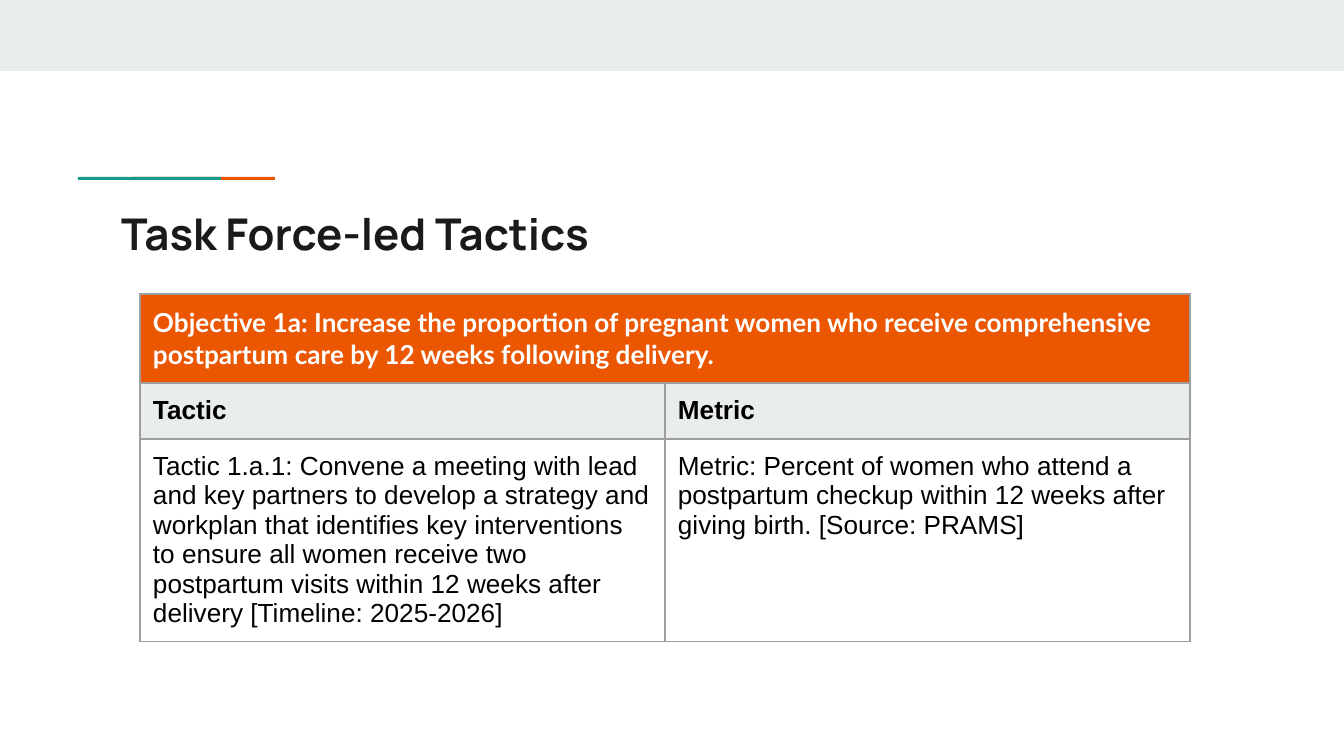
from lxml.etree import SubElement
from pptx import Presentation
from pptx.dml.color import RGBColor
from pptx.enum.shapes import MSO_SHAPE
from pptx.enum.text import MSO_ANCHOR, MSO_AUTO_SIZE, PP_ALIGN
from pptx.oxml.ns import qn
from pptx.util import Emu, Pt

WHITE = RGBColor(0xFF, 0xFF, 0xFF)
BLACK = RGBColor(0x00, 0x00, 0x00)
INK = RGBColor(0x1A, 0x1A, 0x1A)
PALE = RGBColor(0xE9, 0xED, 0xEE)
ORANGE = RGBColor(0xEB, 0x56, 0x00)
TEAL = RGBColor(0x1A, 0x99, 0x88)
GREY = RGBColor(0x9E, 0x9E, 0x9E)


def px(n):
    return Emu(round(n * 914400 / 134.4))


def outline(cell):
    props = cell._tc.get_or_add_tcPr()
    for side in ("a:lnL", "a:lnR", "a:lnT", "a:lnB"):
        line = SubElement(props, qn(side), w=str(Pt(0.75)))
        fill = SubElement(line, qn("a:solidFill"))
        SubElement(fill, qn("a:srgbClr"), val=str(GREY))


deck = Presentation()
deck.slide_width, deck.slide_height = px(1344), px(756)
slide = deck.slides.add_slide(deck.slide_layouts[5])

# Top band and accent bars, teal overlapping orange
for x, y, w, h, color in (
    (0, 0, 1344, 71, PALE),
    (133, 177, 142, 3, ORANGE),
    (78, 177, 143, 3, TEAL),
):
    bar = slide.shapes.add_shape(MSO_SHAPE.RECTANGLE, px(x), px(y), px(w), px(h))
    bar.shadow.inherit = False
    bar.fill.solid()
    bar.fill.fore_color.rgb = color
    bar.line.fill.background()

# Title
title = slide.shapes.title
title.left, title.top, title.width, title.height = px(108), px(194), px(1130), px(79)
frame = title.text_frame
frame.text = "Task Force-led Tactics"
frame.word_wrap = True
frame.auto_size = MSO_AUTO_SIZE.NONE
frame.vertical_anchor = MSO_ANCHOR.TOP
frame.margin_left = frame.margin_right = px(13)
frame.margin_top = frame.margin_bottom = px(13)
head = frame.paragraphs[0]
head.alignment = PP_ALIGN.LEFT
head.font.name, head.font.size, head.font.bold = "Manrope", Pt(23.4), True
head.font.color.rgb = INK

# Table rows: height, fill, font, text colour, bold, cell texts
rows = (
    (89, ORANGE, "Lato", WHITE, True, (
        "Objective 1a: Increase the proportion of pregnant women who receive "
        "comprehensive postpartum care by 12 weeks following delivery.",
        "")),
    (56, PALE, "Arial", BLACK, True, ("Tactic", "Metric")),
    (203, None, "Arial", BLACK, False, (
        "Tactic 1.a.1: Convene a meeting with lead and key partners to develop "
        "a strategy and workplan that identifies key interventions to ensure "
        "all women receive two postpartum visits within 12 weeks after "
        "delivery [Timeline: 2025-2026]",
        "Metric: Percent of women who attend a\n"
        "postpartum checkup within 12 weeks after\n"
        "giving birth. [Source: PRAMS]")),
)
table = slide.shapes.add_table(3, 2, px(140), px(294), px(1050), px(348)).table
table.cell(0, 0).merge(table.cell(0, 1))

for r, (height, back, face, color, bold, texts) in enumerate(rows):
    table.rows[r].height = px(height)
    for c, text in enumerate(texts):
        cell = table.cell(r, c)
        outline(cell)
        if back is None:
            cell.fill.background()
        else:
            cell.fill.solid()
            cell.fill.fore_color.rgb = back
        cell.margin_left = cell.margin_right = px(13)
        cell.margin_top = cell.margin_bottom = px(13)
        cell.text = text
        for para in cell.text_frame.paragraphs:
            para.font.name, para.font.size, para.font.bold = face, Pt(14), bold
            para.font.color.rgb = color

deck.save("out.pptx")
